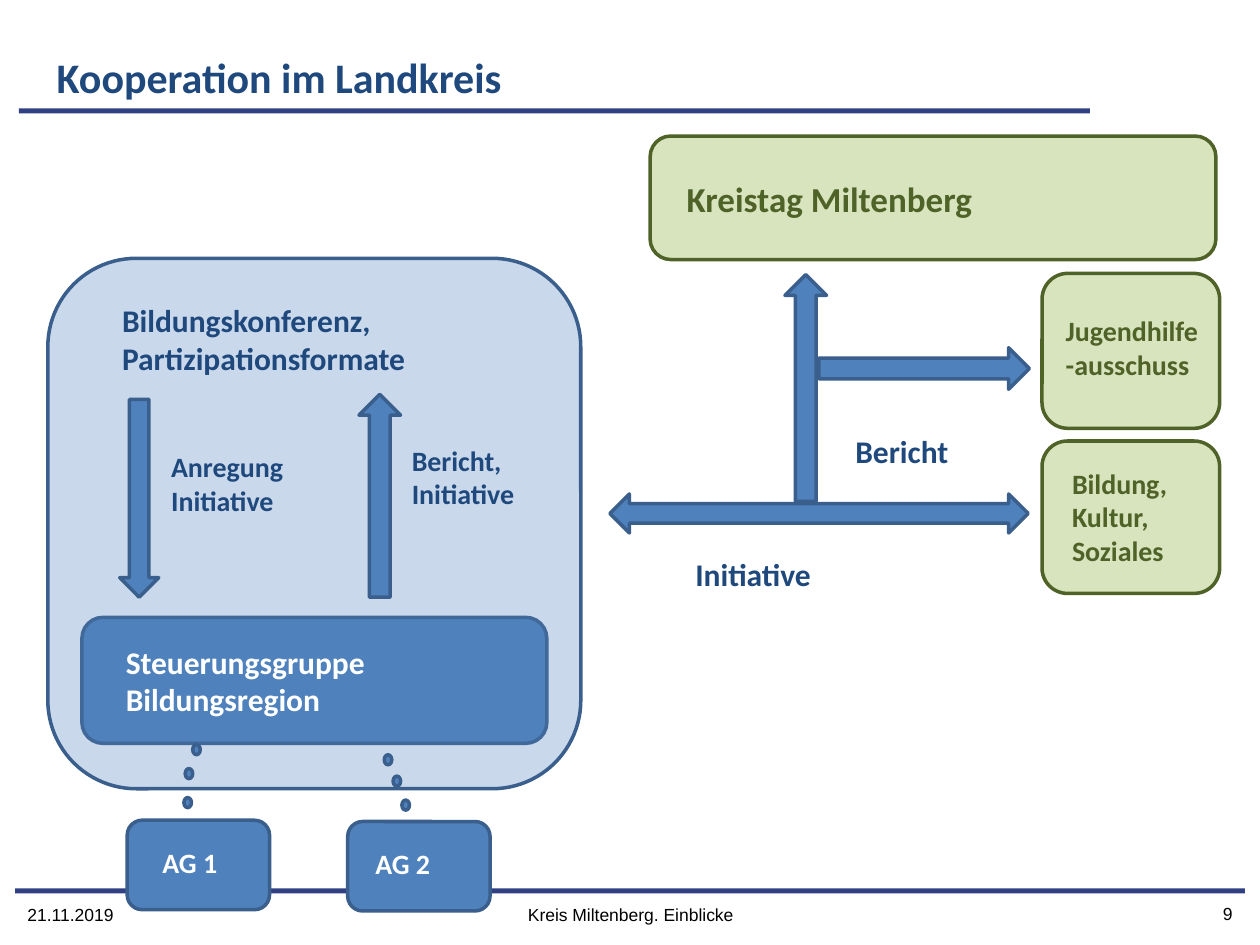
from dataclasses import dataclass

from lxml import etree
from pptx import Presentation
from pptx.dml.color import RGBColor
from pptx.enum import shapes, text
from pptx.oxml import ns
from pptx.util import Inches, Pt

KIND = shapes.MSO_SHAPE
ALIGN = text.PP_ALIGN


@dataclass(frozen=True)
class Theme:
    rule: str = "313F83"
    blue: str = "4F81BD"
    edge: str = "3A5F8C"
    navy: str = "1F497D"
    lime: str = "D7E4BD"
    moss: str = "4F6228"
    white: str = "FFFFFF"
    black: str = "000000"
    font: str = "Calibri"
    plain: str = "Arial"
    title: int = 24
    head: int = 20
    body: int = 18
    label: int = 16
    foot: int = 10
    line: int = 2


T = Theme()


def place(item, at):
    item.left, item.top, item.width, item.height = map(Inches, at)


def add_form(slide, kind, at, fill=T.blue, edge=T.edge, alpha=None):
    """Add a filled preset shape; alpha is its opacity in percent."""
    form = slide.shapes.add_shape(kind, *map(Inches, at))
    form.shadow.inherit = False
    form.fill.solid()
    form.fill.fore_color.rgb = RGBColor.from_string(fill)
    if alpha is not None:
        color = form.fill._xPr.find(".//" + ns.qn("a:srgbClr"))
        etree.SubElement(color, ns.qn("a:alpha"), val=str(alpha * 1000))
    if edge:
        form.line.color.rgb = RGBColor.from_string(edge)
        form.line.width = Pt(T.line)
    else:
        form.line.fill.background()


def write(box, words, size, color, font=T.font, bold=True,
          align=ALIGN.LEFT, anchor=text.MSO_ANCHOR.TOP):
    frame = box.text_frame
    frame.word_wrap = True
    frame.vertical_anchor = anchor
    frame.text = words
    para = frame.paragraphs[0]
    para.alignment = align
    para.font.name = font
    para.font.size = Pt(size)
    para.font.bold = bold
    para.font.color.rgb = RGBColor.from_string(color)


def add_label(slide, words, at, size, color, **style):
    box = slide.shapes.add_textbox(*map(Inches, at))
    write(box, words, size, color, **style)


def add_frame(slide):
    """Title, rules and footer."""
    title = slide.shapes.title
    place(title, (0.35, 0.36, 9.13, 0.5))
    write(title, "Kooperation im Landkreis", T.title, T.navy)
    for at in [(0.15, 0.86, 8.5, 0.04), (0.12, 7.05, 9.76, 0.04)]:
        add_form(slide, KIND.RECTANGLE, at, T.rule, None)
    for words, left, top, width, align in [
        ("21.11.2019", 0.12, 7.06, 2.33, ALIGN.LEFT),
        ("Kreis Miltenberg. Einblicke", 3.42, 7.06, 3.17, ALIGN.CENTER),
        ("9", 7.55, 7.05, 2.33, ALIGN.RIGHT),
    ]:
        add_label(slide, words, (left, top, width, 0.4), T.foot, T.black,
                  font=T.plain, bold=False, align=align,
                  anchor=text.MSO_ANCHOR.MIDDLE)


def add_region(slide):
    """Education region with its steering group and working groups."""
    add_form(slide, KIND.ROUNDED_RECTANGLE, (0.65, 4.9, 3.69, 1))
    add_form(slide, KIND.ROUNDED_RECTANGLE, (0.38, 2.05, 4.23, 4.21), alpha=30)
    add_form(slide, KIND.DOWN_ARROW, (0.95, 3.17, 0.31, 1.57))
    add_form(slide, KIND.UP_ARROW, (2.85, 3.13, 0.33, 1.61))
    for words, at, size, color in [
        ("Steuerungsgruppe Bildungsregion", (0.9, 5.05, 3.54, 0.71),
         T.body, T.white),
        ("Bildungskonferenz, Partizipationsformate", (0.87, 2.34, 4.02, 0.71),
         T.body, T.navy),
        ("Anregung\vInitiative", (1.26, 3.52, 1.34, 0.64), T.label, T.navy),
        ("Bericht, Initiative", (3.17, 3.47, 1.13, 0.64), T.label, T.navy),
    ]:
        add_label(slide, words, at, size, color)

    # Working groups, each tied to the steering group by dots
    for words, left, top, inset, dots in [
        ("AG 1", 1.01, 6.51, 0.18, [(1.53, 5.91), (1.47, 6.1), (1.46, 6.33)]),
        ("AG 2", 2.76, 6.52, 0.12, [(3.05, 5.99), (3.12, 6.16), (3.19, 6.35)]),
    ]:
        add_form(slide, KIND.ROUNDED_RECTANGLE, (left, top, 1.13, 0.71))
        add_label(slide, words, (left + inset, top + 0.15, 0.89, 0.37),
                  T.label, T.white)
        for x, y in dots:
            add_form(slide, KIND.FLOWCHART_CONNECTOR, (x, y, 0.06, 0.08))


def add_council(slide):
    """District council and its committees."""
    for words, box, spot, size in [
        ("Kreistag Miltenberg", (5.16, 1.08, 4.49, 0.98),
         (5.35, 1.36, 4.02, 0.44), T.head),
        ("Jugendhilfe-ausschuss", (8.27, 2.17, 1.41, 1.23),
         (8.36, 2.44, 1.31, 0.94), T.label),
        ("Bildung, Kultur, Soziales", (8.27, 3.5, 1.41, 1.21),
         (8.41, 3.65, 1.09, 0.91), T.label),
    ]:
        add_form(slide, KIND.ROUNDED_RECTANGLE, box, T.lime, T.moss)
        add_label(slide, words, spot, size, T.moss)


def add_links(slide):
    """Arrows between region and council."""
    add_form(slide, KIND.RIGHT_ARROW, (6.5, 2.76, 1.67, 0.33))
    add_form(slide, KIND.LEFT_RIGHT_ARROW, (4.84, 3.92, 3.32, 0.31))
    add_form(slide, KIND.UP_ARROW, (6.23, 2.18, 0.33, 1.8))
    add_label(slide, "Initiative", (5.42, 4.36, 1.27, 0.4), T.body, T.navy)
    add_label(slide, "Bericht", (6.69, 3.38, 1.57, 0.4), T.body, T.navy)


def main():
    deck = Presentation()
    deck.slide_width, deck.slide_height = Inches(10), Inches(7.5)
    slide = deck.slides.add_slide(deck.slide_layouts[5])
    add_frame(slide)
    add_region(slide)
    add_council(slide)
    add_links(slide)
    deck.save("out.pptx")


if __name__ == "__main__":
    main()
